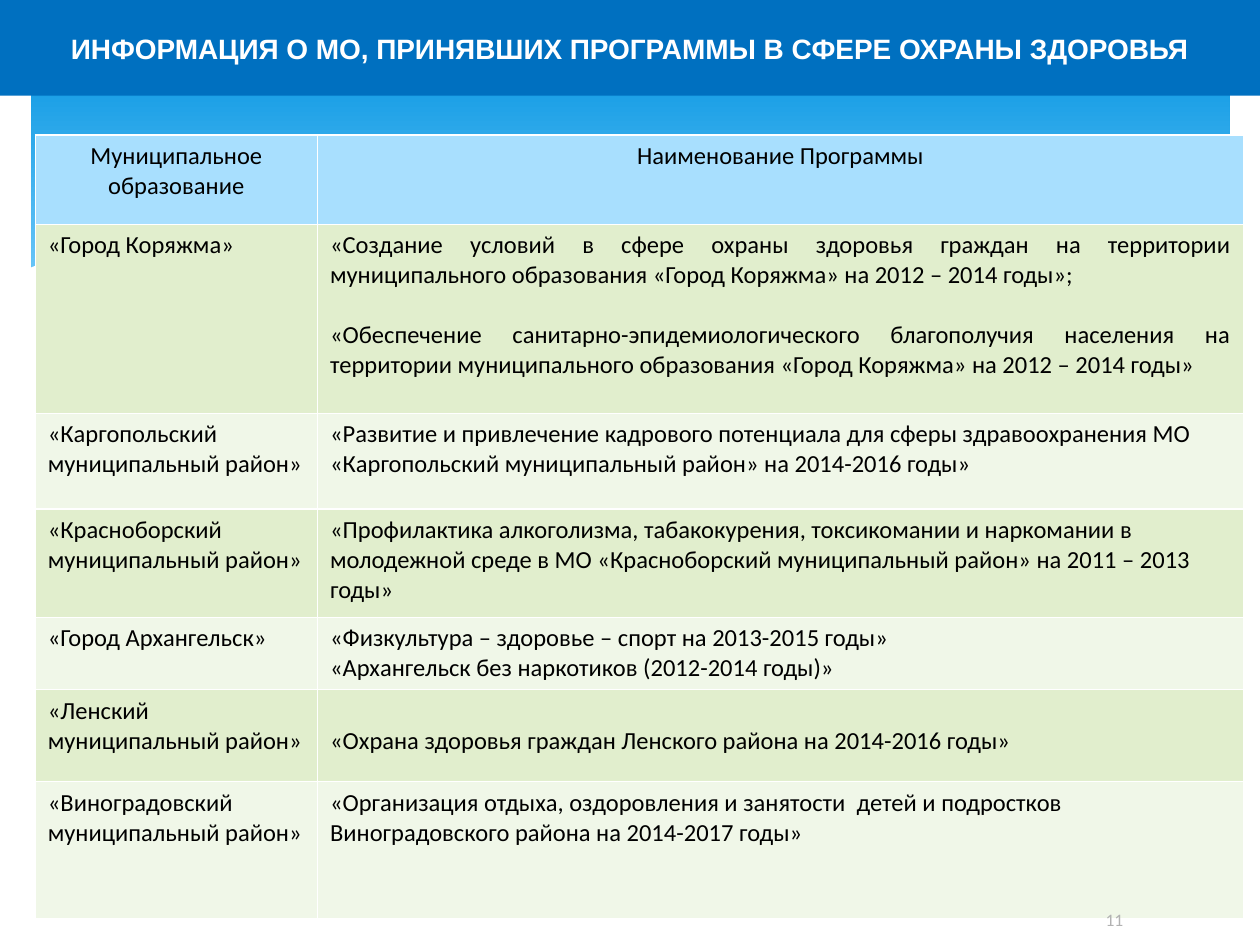
"""Build a slide listing municipalities that adopted health protection programmes."""
from pptx import Presentation
from pptx import util as u
from pptx.dml.color import RGBColor
from pptx.enum import shapes, text

BLUE = RGBColor(0x00, 0x70, 0xC0)
DEEP = RGBColor(0x02, 0x93, 0xE0)
SKY = RGBColor(0x83, 0xD3, 0xFE)
HEAD = RGBColor(0xA8, 0xDF, 0xFE)
GREEN = RGBColor(0xE1, 0xEE, 0xCD)
PALE = RGBColor(0xF0, 0xF7, 0xE8)
GREY = RGBColor(0xB2, 0xB2, 0xB2)
WHITE = RGBColor(0xFF, 0xFF, 0xFF)
BLACK = RGBColor(0x00, 0x00, 0x00)

TITLE = "ИНФОРМАЦИЯ О МО, ПРИНЯВШИХ ПРОГРАММЫ В СФЕРЕ ОХРАНЫ ЗДОРОВЬЯ"
NUMBER = "11"
ROWS = [
    (0.71, "Муниципальное образование", ["Наименование Программы"]),
    (1.5, "«Город Коряжма»", [
        "«Создание условий в сфере охраны здоровья граждан на территории "
        "муниципального образования «Город Коряжма» на 2012 – 2014 годы»;",
        "«Обеспечение санитарно-эпидемиологического благополучия населения на "
        "территории муниципального образования «Город Коряжма» на 2012 – 2014 годы»"]),
    (0.76, "«Каргопольский муниципальный район»", [
        "«Развитие и привлечение кадрового потенциала для сферы здравоохранения МО "
        "«Каргопольский муниципальный район» на 2014-2016 годы»"]),
    (0.86, "«Красноборский муниципальный район»", [
        "«Профилактика алкоголизма, табакокурения, токсикомании и наркомании в "
        "молодежной среде в МО «Красноборский муниципальный район» на 2011 – 2013 годы»"]),
    (0.57, "«Город Архангельск»", [
        "«Физкультура – здоровье – спорт на 2013-2015 годы»",
        "«Архангельск без наркотиков (2012-2014 годы)»"]),
    (0.73, "«Ленский муниципальный район»", [
        "«Охрана здоровья граждан Ленского района на 2014-2016 годы»"]),
    (1.09, "«Виноградовский муниципальный район»", [
        "«Организация отдыха, оздоровления и занятости  детей и подростков "
        "Виноградовского района на 2014-2017 годы»"]),
]
COLS = [2.24, 7.35]
CITY, LENA = 1, 5
WAVE = [(0.23, 2.13), (0.52, 2.01), (0.95, 1.91), (1.46, 1.85), (1.93, 1.84),
        (2.5, 1.86), (3.16, 1.94), (3.91, 2.07), (4.75, 2.27), (5.55, 2.45),
        (6.26, 2.58), (7.08, 2.7), (8.09, 2.77), (8.87, 2.71), (9.4, 2.59),
        (9.77, 2.46), (9.77, 3.29), (0.23, 3.29)]


def box(*sizes):
    return [u.Inches(size) for size in sizes]


def write(frame, lines, font, size, color, bold=False, align=None, gap=0):
    for i, line in enumerate(lines):
        para = frame.paragraphs[0] if i == 0 else frame.add_paragraph()
        para.alignment = align
        if i and gap:
            para.space_before = u.Pt(gap)
        run = para.add_run()
        run.text = line
        run.font.name, run.font.size, run.font.bold = font, u.Pt(size), bold
        run.font.color.rgb = color


def add_back(slide):
    panel = slide.shapes.add_shape(
        shapes.MSO_SHAPE.ROUNDED_RECTANGLE, *box(0.25, 0.25, 9.51, 2.7))
    panel.adjustments[0] = 0.03
    panel.fill.gradient()
    panel.fill.gradient_angle = 270
    stops = panel.fill.gradient_stops
    for stop, color, place in zip(stops, (DEEP, SKY), (0, 0.9)):
        stop.color.rgb, stop.position = color, place

    points = [box(*point) for point in WAVE]
    path = slide.shapes.build_freeform(*points[0])
    path.add_line_segments(points[1:], close=True)
    wave = path.convert_to_shape()
    wave.fill.solid()
    wave.fill.fore_color.rgb = WHITE
    for shape in (panel, wave):
        shape.line.fill.background()
        shape.shadow.inherit = False


def add_grid(slide):
    high = sum(row[0] for row in ROWS)
    grid = slide.shapes.add_table(
        len(ROWS), len(COLS), *box(0.28, 1.07, sum(COLS), high)).table
    for col, width in zip(grid.columns, COLS):
        col.width = u.Inches(width)
    for i, (height, place, plans) in enumerate(ROWS):
        grid.rows[i].height = u.Inches(height)
        for j, lines in enumerate(([place], plans)):
            cell = grid.cell(i, j)
            cell.fill.solid()
            cell.fill.fore_color.rgb = HEAD if i == 0 else GREEN if i % 2 else PALE
            align, gap = text.PP_ALIGN.LEFT, 0
            if i == 0:
                align = text.PP_ALIGN.CENTER
            elif (i, j) == (CITY, 1):
                align, gap = text.PP_ALIGN.JUSTIFY, 17
            elif (i, j) == (LENA, 1):
                cell.margin_top = u.Inches(0.29)
            write(cell.text_frame, lines, "Calibri", 14, BLACK, align=align, gap=gap)


def add_title(slide):
    title = slide.shapes.title
    title.left, title.top, title.width, title.height = box(0, 0, 10, 0.76)
    title.fill.solid()
    title.fill.fore_color.rgb = BLUE
    frame = title.text_frame
    frame.auto_size = text.MSO_AUTO_SIZE.NONE
    frame.vertical_anchor = text.MSO_ANCHOR.MIDDLE
    write(frame, [TITLE], "Arial", 16, WHITE, True, text.PP_ALIGN.CENTER)
    slide.shapes._spTree.append(title._element)


def add_number(slide):
    frame = slide.shapes.add_textbox(*box(7.68, 7.1, 2.33, 0.4)).text_frame
    frame.word_wrap = True
    frame.vertical_anchor = text.MSO_ANCHOR.MIDDLE
    write(frame, [NUMBER], "Calibri", 10, GREY, align=text.PP_ALIGN.CENTER)


def main():
    deck = Presentation()
    deck.slide_width, deck.slide_height = box(10, 7.5)
    slide = deck.slides.add_slide(deck.slide_layouts[5])
    add_back(slide)
    add_grid(slide)
    add_title(slide)
    add_number(slide)
    deck.save("out.pptx")


if __name__ == "__main__":
    main()
